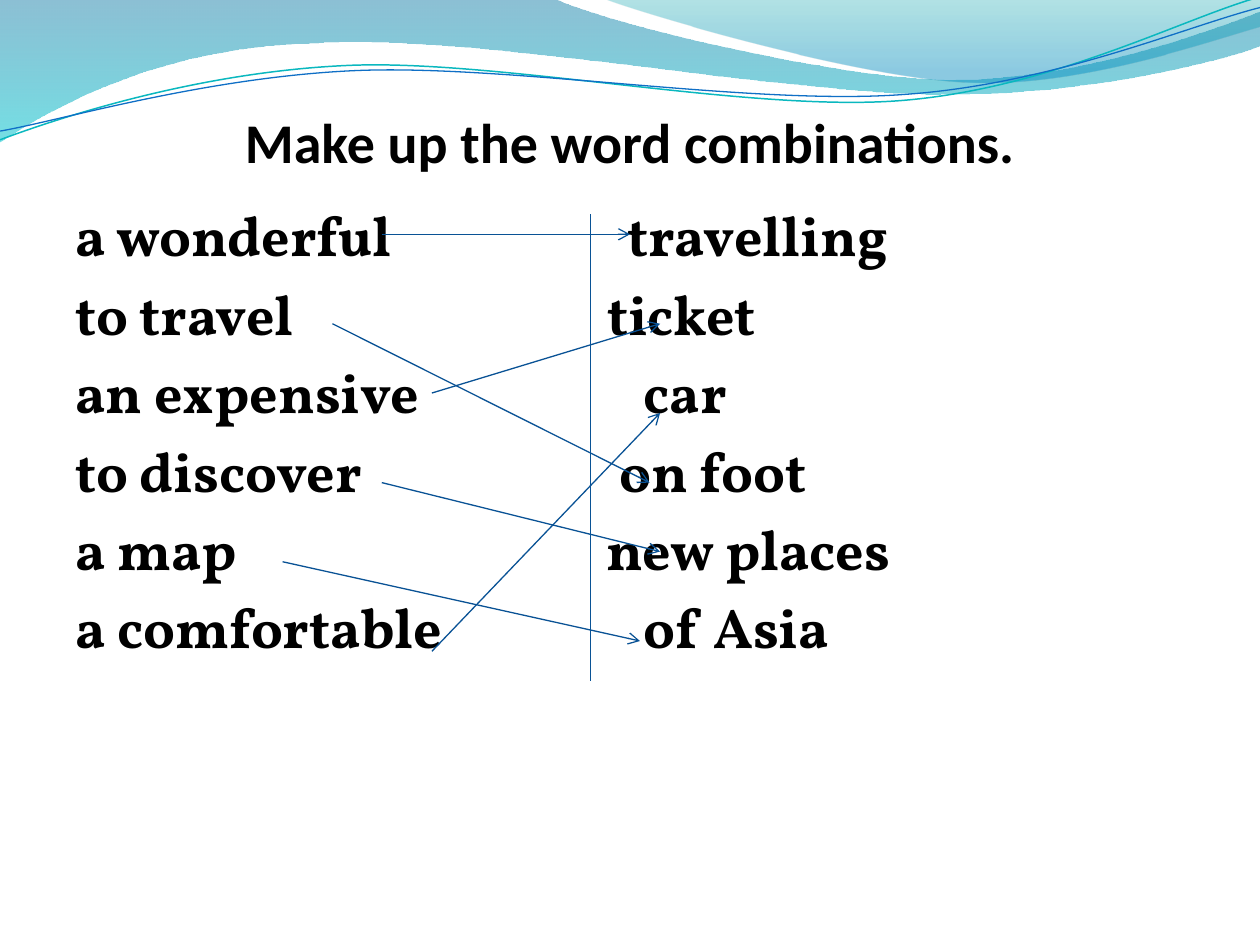
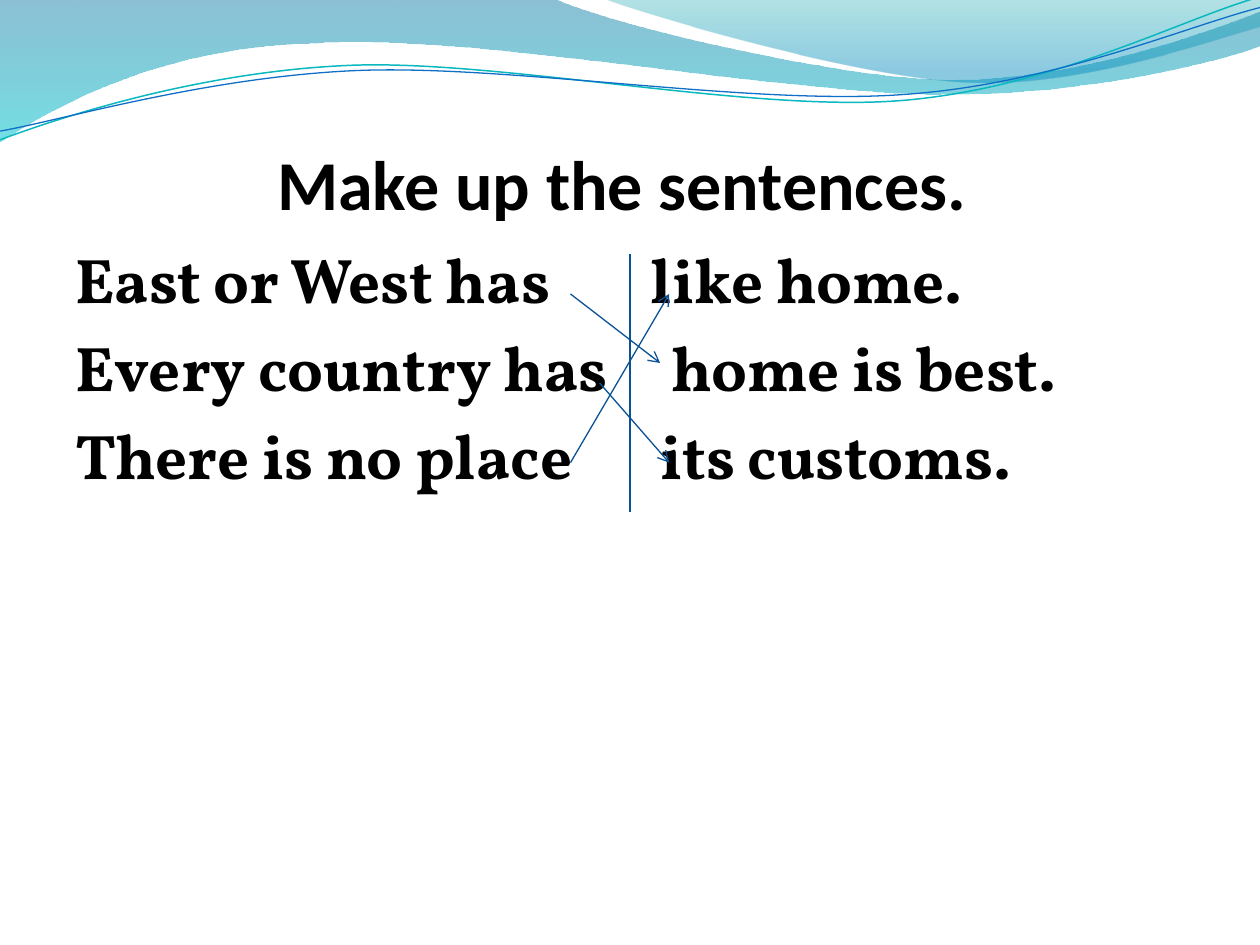
from lxml.etree import SubElement
from pptx import Presentation
from pptx.dml.color import RGBColor
from pptx.enum.shapes import MSO_CONNECTOR
from pptx.enum.text import MSO_ANCHOR, PP_ALIGN
from pptx.oxml.ns import qn
from pptx.util import Pt

# Content: places and sizes in points, rows as (left part, right part, x of right part)
TASKS = [
    {
        "title": "Make up the word combinations.",
        "head": (36, 55.4, 648, 44.6), "size": 32,
        "body": (36, 111.2, 648, 387), "text": 32,
        "rows": [
            ("a wonderful", "travelling", 358.5),
            ("to travel", "ticket", 347.4),
            ("an expensive", "car", 368),
            ("to discover", "on foot", 354.2),
            ("a map", "new places", 346.8),
            ("a comfortable", "of Asia", 368),
        ],
        "rule": (337.5, 122.4, 337.5, 389),
        "arrows": [
            (218.2, 133.9, 360, 133.9),
            (190, 185, 371.2, 275.8),
            (246.8, 224.6, 377.2, 185),
            (218.2, 275.8, 377.2, 315.2),
            (161.5, 321, 365.7, 366.3),
            (246.8, 372.2, 377.2, 236),
        ],
    },
    {
        "title": "Make up the sentences.",
        "head": (31.3, 71.3, 648, 56.9), "size": 40,
        "body": (36, 133.9, 648, 364.3), "text": 36,
        "rows": [
            ("East or West has", "like home.", 372),
            ("Every country has", "home is best.", 384),
            ("There is no place", "its customs.", 377.5),
        ],
        "rule": (360, 145.4, 360, 292.5),
        "arrows": [
            (326, 168, 377.2, 207.4),
            (342.7, 218.9, 382.4, 264.4),
            (326, 264.4, 382.4, 168),
        ],
    },
]

# Shared look
COLORS = {
    "text": "000000", "arrow": "095295",
    "blue": "0074A1", "aqua": "00C6CF", "teal": "00A1A9", "sky": "008BBF",
    "upper": "0AB8BF", "lower": "0F6FC6",
}
FONTS = {"title": "Calibri", "body": "Vollkorn"}
INSET = 7.2

# Outlines: a start point, then lines (one point) and Bezier curves (three points)
BANDS = [
    ([(0, 0), [(316.8, -0.7)],
      [(342.7, 12.2), (478.1, 45.4), (545.8, 45.4)],
      [(614.2, 45.4), (689.8, 18.7), (720, 6.5)],
      [(720.7, 25.9)],
      [(707.8, 31.7), (626.4, 54.7), (537.1, 54)],
      [(447.8, 54), (275, 20.2), (185, 24.5)],
      [(92.9, 25.9), (33.1, 59.8), (-0.7, 81.4)],
      [(0, 0)]],
     [(0, "blue", 45), (1, "aqua", 55)]),
    ([(344.9, -0.7),
      [(366.5, 7.9), (491, 44.6), (553.7, 46.8)],
      [(616.3, 49.7), (691.9, 23), (720, 15.1)],
      [(720, 0)],
      [(344.9, -0.7)]],
     [(0, "teal", 30), (0.8, "sky", 45)]),
]
WAVES = [
    ([(0, 79.9),
      [(34.6, 67), (113.8, 41), (199.4, 37.4)],
      [(284.4, 33.8), (427, 64.1), (513.4, 57.6)],
      [(599.8, 51.1), (675.4, 10.8), (718.6, -1.4)]], "upper", 0.85),
    ([(0, 74.9),
      [(33.8, 69.1), (118.1, 43.9), (203.8, 40.3)],
      [(290.2, 36.7), (429.8, 60.5), (516.2, 54)],
      [(601.9, 48.2), (677.5, 15.1), (720, 4.3)]], "lower", 0.75),
]


def rgb(name):
    return RGBColor.from_string(COLORS[name])


def draw(slide, outline, close):
    """Draw an outline, joining each three-point part into one curve."""
    start, *parts = outline
    dots = [(Pt(x), Pt(y)) for part in parts for x, y in part]
    pen = slide.shapes.build_freeform(*map(Pt, start))
    pen.add_line_segments(dots, close=close)
    shape = pen.convert_to_shape()
    shape.shadow.inherit = False
    moves = iter(list(shape.element.iter(qn("a:lnTo"))))
    for part in parts:
        first, *rest = [next(moves) for _ in part]
        if rest:
            first.tag = qn("a:cubicBezTo")
            for move in rest:
                first.append(move[0])
                move.getparent().remove(move)
    return shape


def add_top(slide):
    # Gradient bands
    for outline, stops in BANDS:
        shape = draw(slide, outline, True)
        shape.fill.gradient()
        shape.fill.gradient_angle = 270
        for stop, (place, color, _) in zip(shape.fill.gradient_stops, stops):
            stop.position = place
            stop.color.rgb = rgb(color)
        tints = shape.element.spPr.iter(qn("a:srgbClr"))
        for tint, (_, _, alpha) in zip(list(tints), stops):
            SubElement(tint, qn("a:alpha"), val=str(alpha * 1000))
        shape.line.fill.background()
    # Thin waves
    for outline, color, width in WAVES:
        shape = draw(slide, outline, False)
        shape.fill.background()
        shape.line.color.rgb = rgb(color)
        shape.line.width = Pt(width)


def add_text(slide, box, lines, font, size):
    frame = slide.shapes.add_textbox(*map(Pt, box)).text_frame
    frame.word_wrap = True
    frame.text = "\n".join(lines)
    for para in frame.paragraphs:
        for run in para.runs:
            run.font.name = FONTS[font]
            run.font.size = Pt(size)
            run.font.bold = True
            run.font.color.rgb = rgb("text")
    return frame


def add_title(slide, task):
    frame = add_text(slide, task["head"], [task["title"]], "title", task["size"])
    frame.vertical_anchor = MSO_ANCHOR.BOTTOM
    frame.margin_left = frame.margin_right = frame.margin_bottom = 0
    frame.paragraphs[0].alignment = PP_ALIGN.CENTER


def add_rows(slide, task):
    rows = task["rows"]
    lines = [f"{left}\t{right}" for left, right, _ in rows]
    frame = add_text(slide, task["body"], lines, "body", task["text"])
    start = task["body"][0] + INSET
    for para, (_, _, x) in zip(frame.paragraphs, rows):
        props = para._p.get_or_add_pPr()
        gap = SubElement(props, qn("a:spcBef"))
        SubElement(gap, qn("a:spcPct"), val="20000")
        tabs = SubElement(props, qn("a:tabLst"))
        SubElement(tabs, qn("a:tab"), pos=str(Pt(x - start)), algn="l")


def add_line(slide, ends, arrow=False):
    line = slide.shapes.add_connector(MSO_CONNECTOR.STRAIGHT, *map(Pt, ends))
    line.line.color.rgb = rgb("arrow")
    line.line.width = Pt(0.75)
    if arrow:
        SubElement(line.line._get_or_add_ln(), qn("a:tailEnd"), type="arrow")
    SubElement(line._element.spPr, qn("a:effectLst"))


def main():
    deck = Presentation()
    deck.slide_width, deck.slide_height = Pt(720), Pt(540)
    for task in TASKS:
        slide = deck.slides.add_slide(deck.slide_layouts[6])
        add_top(slide)
        add_title(slide, task)
        add_rows(slide, task)
        add_line(slide, task["rule"])
        for ends in task["arrows"]:
            add_line(slide, ends, arrow=True)
    deck.save("out.pptx")


if __name__ == "__main__":
    main()
